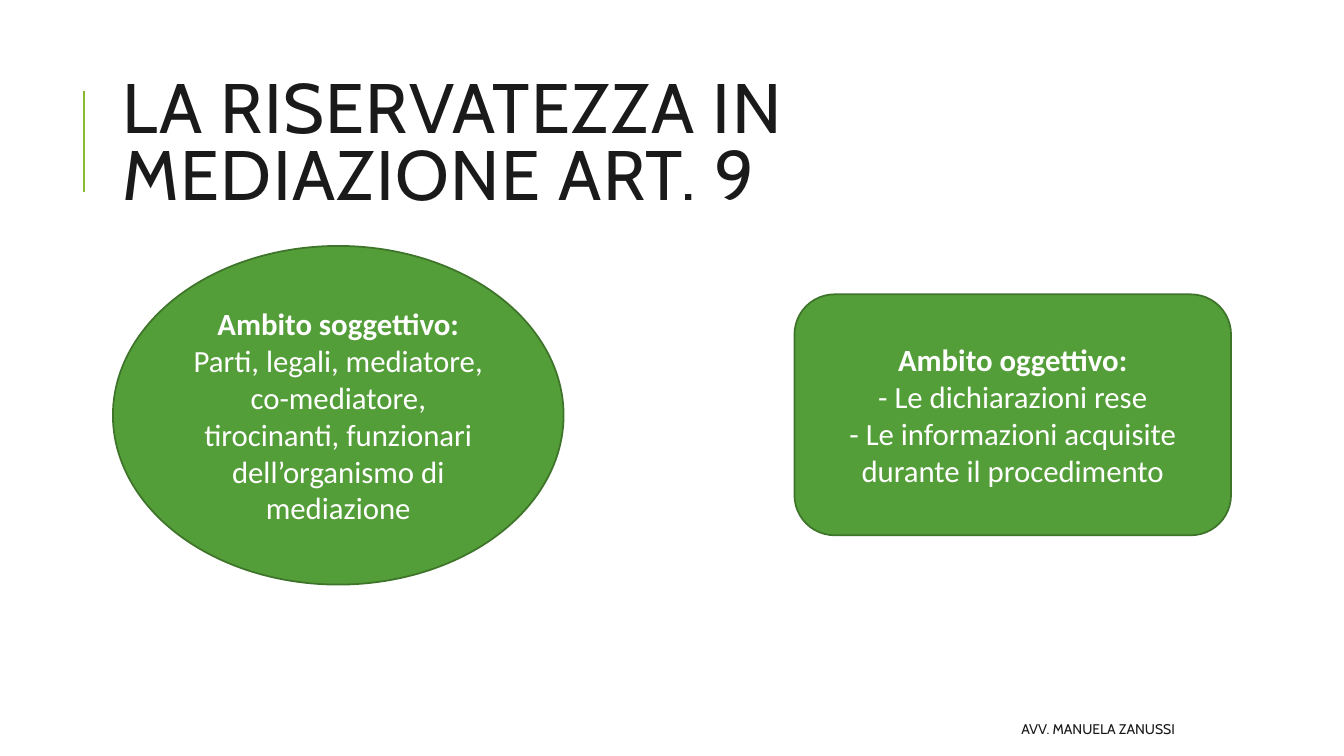
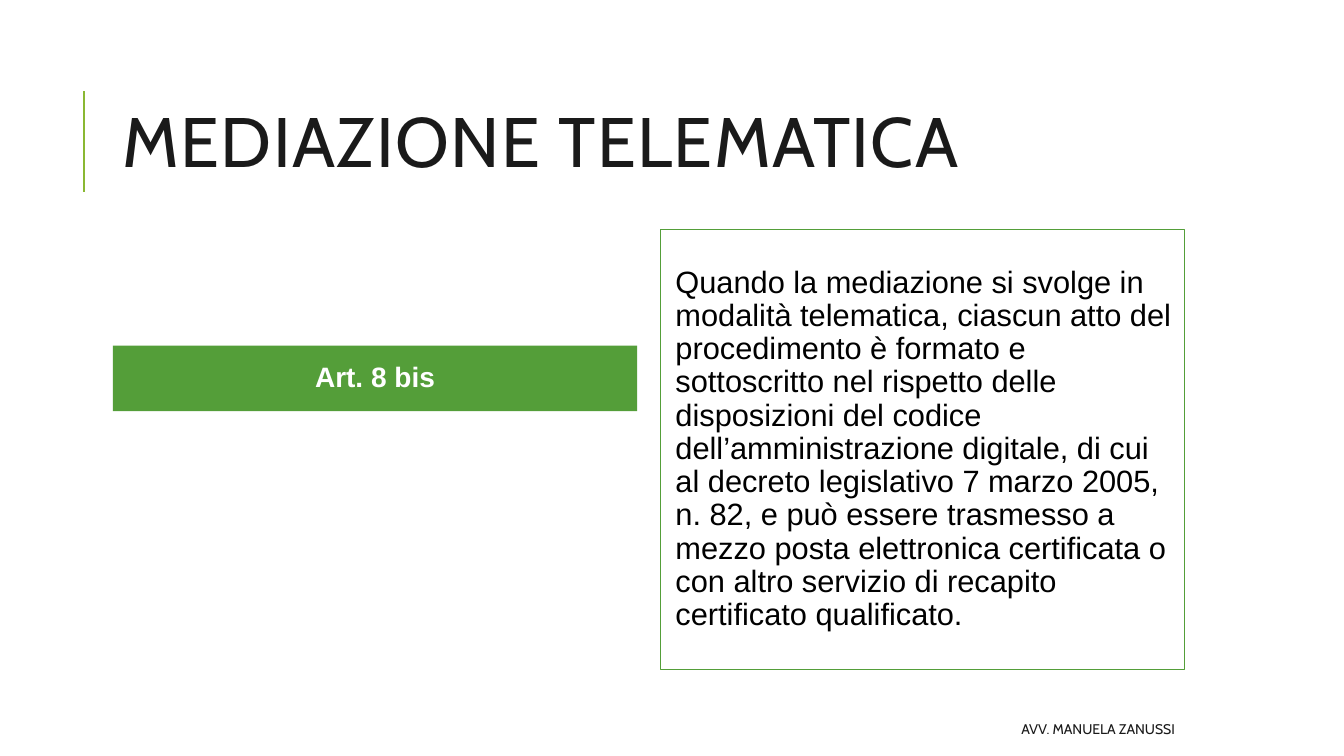
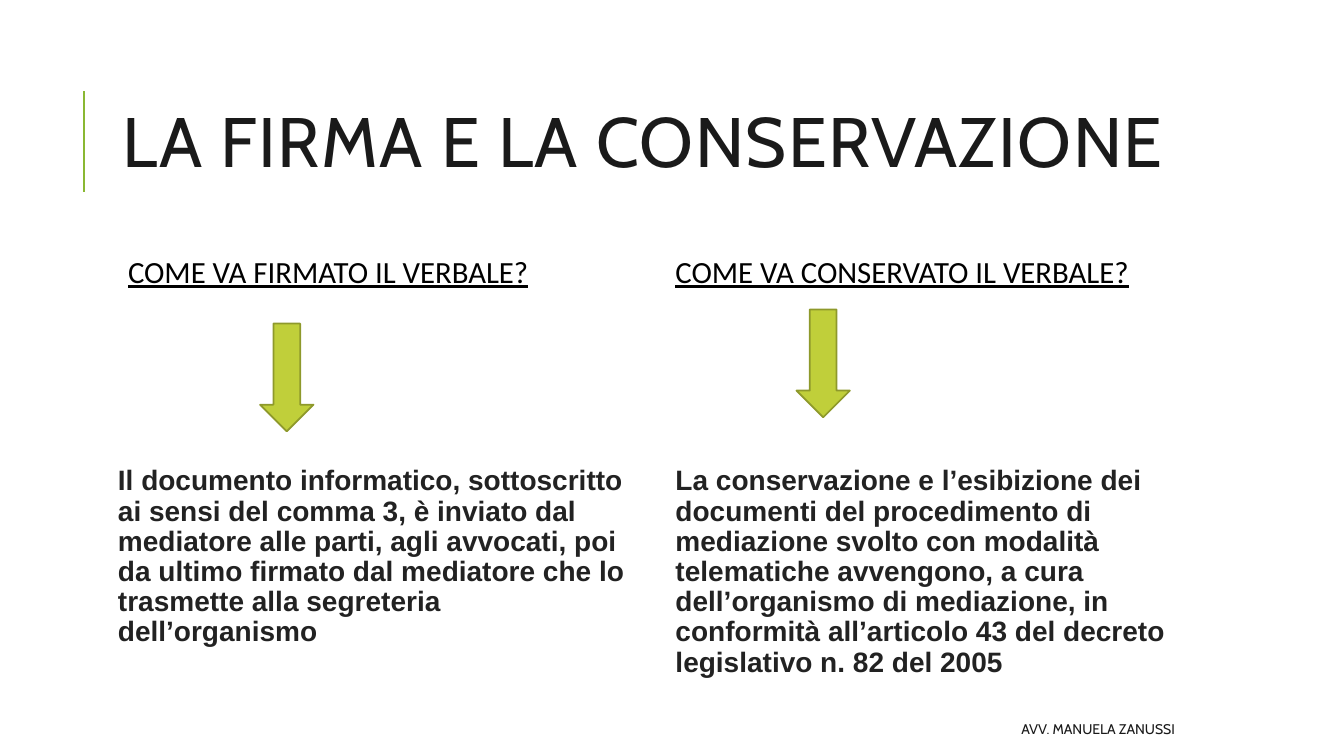
import dataclasses
import typing

import pptx
import pptx.dml.color
import pptx.enum.shapes
import pptx.enum.text
import pptx.oxml
import pptx.oxml.ns
import pptx.util

PX = 9144  # EMU; 100 px to the inch
COLORS = {
    "white": "FFFFFF", "black": "000000", "title": "1A1A1A", "body": "222222",
    "green": "549E39", "dark_green": "3E752A", "accent": "8AB833",
    "lime": "C0CF3A", "dark_lime": "8E992B",
}
SHAPES = pptx.enum.shapes.MSO_SHAPE
ALIGN = pptx.enum.text.PP_ALIGN
ANCHOR = pptx.enum.text.MSO_ANCHOR

LEFT, COLUMN_W, COLUMN_GAP = 112, 520, 23
RIGHT = LEFT + COLUMN_W + COLUMN_GAP
CONTENT_W = RIGHT + COLUMN_W - LEFT
INSET, INDENT = 5, 10
FOOTER = "AVV. MANUELA ZANUSSI"
BODY_SPACING = {"line": 0.9, "before": 12, "after": 2}


@dataclasses.dataclass(frozen=True)
class Box:
    x: int
    y: int
    w: int
    h: int

    def emu(self) -> list[int]:
        return [v * PX for v in dataclasses.astuple(self)]


@dataclasses.dataclass(frozen=True)
class Scope:
    """A green shape with a bold heading and plain lines."""
    kind: typing.Any
    box: Box
    heading: str
    lines: tuple[str, ...]


@dataclasses.dataclass(frozen=True)
class Answer:
    """A column with a question, an arrow and the reply."""
    x: int
    arrow: Box
    question: str
    reply: str
    indent: int


SCOPES = (
    Scope(SHAPES.OVAL, Box(112, 244, 447, 336), "Ambito soggettivo:",
          ("Parti, legali, mediatore, co-mediatore, tirocinanti, funzionari "
           "dell’organismo di mediazione",)),
    Scope(SHAPES.ROUNDED_RECTANGLE, Box(788, 292, 433, 239), "Ambito oggettivo:",
          ("- Le dichiarazioni rese",
           "- Le informazioni acquisite durante il procedimento")),
)
ARTICLE_TEXT = (
    "Quando la mediazione si svolge in modalità telematica, ciascun atto del "
    "procedimento è formato e sottoscritto nel rispetto delle disposizioni del "
    "codice dell’amministrazione digitale, di cui al decreto legislativo 7 marzo "
    "2005, n. 82, e può essere trasmesso a mezzo posta elettronica certificata o "
    "con altro servizio di recapito certificato qualificato."
)
ANSWERS = (
    Answer(LEFT, Box(258, 321, 53, 107), "COME VA FIRMATO IL VERBALE?",
           "Il documento informatico, sottoscritto ai sensi del comma 3, è inviato "
           "dal mediatore alle parti, agli avvocati, poi da ultimo firmato dal "
           "mediatore che lo trasmette alla segreteria dell’organismo", 0),
    Answer(RIGHT, Box(790, 307, 53, 107), "COME VA CONSERVATO IL VERBALE?",
           "La conservazione e l’esibizione dei documenti del procedimento di "
           "mediazione svolto con modalità telematiche avvengono, a cura "
           "dell’organismo di mediazione, in conformità all’articolo 43 del decreto "
           "legislativo n. 82 del 2005", INDENT),
)


def rgb(name: str) -> pptx.dml.color.RGBColor:
    return pptx.dml.color.RGBColor.from_string(COLORS[name])


def add_text(tf, text: str, *, size: int, font: str = "Calibri",
             color: str = "black", bold: bool = False, underline: bool = False,
             align=ALIGN.LEFT, line: float = 1.0, before: int = 0,
             after: int = 0, indent: int = 0, tracking: int = 0) -> None:
    """Fill the empty first paragraph, or append one; tracking is in points."""
    p = tf.paragraphs[0] if not tf.text else tf.add_paragraph()
    p.alignment = align
    p.line_spacing = line
    p.space_before = pptx.util.Pt(before)
    p.space_after = pptx.util.Pt(after)
    if indent:
        p._p.get_or_add_pPr().set("marL", str(indent * PX))
    r = p.add_run()
    r.text = text
    r.font.size = pptx.util.Pt(size)
    r.font.name = font
    r.font.bold = bold
    r.font.underline = underline
    r.font.color.rgb = rgb(color)
    if tracking:
        r._r.get_or_add_rPr().set("spc", str(tracking * 100))


def set_frame(tf, anchor, inset: int | None = None) -> None:
    tf.word_wrap = True
    tf.vertical_anchor = anchor
    if inset is not None:
        tf.margin_left = tf.margin_right = inset * PX
        tf.margin_top = tf.margin_bottom = inset * PX


def add_text_box(s, box: Box, anchor=ANCHOR.MIDDLE, inset: int | None = None):
    tf = s.shapes.add_textbox(*box.emu()).text_frame
    set_frame(tf, anchor, inset)
    return tf


def add_shape(s, kind, box: Box, *, fill: str | None = None,
              line: str | None = None, width: float = 1.25,
              inset: int | None = None):
    sp = s.shapes.add_shape(kind, *box.emu())
    sp.shadow.inherit = False
    if fill:
        sp.fill.solid()
        sp.fill.fore_color.rgb = rgb(fill)
    else:
        sp.fill.background()
    if line:
        sp.line.color.rgb = rgb(line)
        sp.line.width = pptx.util.Pt(width)
    else:
        sp.line.fill.background()
    set_frame(sp.text_frame, ANCHOR.MIDDLE, inset)
    return sp


def add_slide(prs, title: str):
    """Add a slide with the shared accent line, title and footer."""
    s = prs.slides.add_slide(prs.slide_layouts[6])
    accent = s.shapes.add_connector(
        pptx.enum.shapes.MSO_CONNECTOR.STRAIGHT, 83 * PX, 190 * PX, 83 * PX, 90 * PX)
    accent.line.color.rgb = rgb("accent")
    accent.line.width = pptx.util.Pt(1.5)
    accent._element.spPr.append(pptx.oxml.parse_xml(
        f"<a:effectLst {pptx.oxml.ns.nsdecls('a')}/>"))
    add_text(add_text_box(s, Box(LEFT, 64, CONTENT_W, 164)), title, size=50,
             font="Cabin", color="title", line=0.8, tracking=1)
    add_text(add_text_box(s, Box(530, 708, 645, 30)), FOOTER, size=10,
             font="Cabin", color="title", align=ALIGN.RIGHT)
    return s


def add_confidentiality_slide(prs) -> None:
    s = add_slide(prs, "LA RISERVATEZZA IN MEDIAZIONE ART. 9")
    for scope in SCOPES:
        sp = add_shape(s, scope.kind, scope.box, fill="green", line="dark_green")
        for i, text in enumerate((scope.heading, *scope.lines)):
            add_text(sp.text_frame, text, size=22, color="white", bold=i == 0,
                     align=ALIGN.CENTER)


def add_online_slide(prs) -> None:
    s = add_slide(prs, "MEDIAZIONE TELEMATICA")
    label = add_shape(s, SHAPES.RECTANGLE, Box(LEFT, 343, COLUMN_W, 65),
                      fill="green", inset=INSET)
    add_text(label.text_frame, "Art. 8 bis", size=20, font="Arial", color="white",
             bold=True, align=ALIGN.CENTER, **BODY_SPACING)
    article = add_shape(s, SHAPES.RECTANGLE, Box(RIGHT, 228, COLUMN_W, 436),
                        line="green", width=0.75, inset=INSET)
    add_text(article.text_frame, ARTICLE_TEXT, size=22, font="Arial",
             indent=INDENT, **BODY_SPACING)


def add_signature_slide(prs) -> None:
    s = add_slide(prs, "LA FIRMA E LA CONSERVAZIONE")
    for answer in ANSWERS:
        tf = add_text_box(s, Box(answer.x, 250, COLUMN_W, 440), ANCHOR.TOP, INSET)
        add_text(tf, answer.question, size=22, underline=True, indent=INDENT,
                 **BODY_SPACING)
        add_text(tf, answer.reply, size=20, font="Arial", color="body", bold=True,
                 indent=answer.indent, **{**BODY_SPACING, "before": 124})
        add_shape(s, SHAPES.DOWN_ARROW, answer.arrow, fill="lime", line="dark_lime")


def main() -> None:
    prs = pptx.Presentation()
    prs.slide_width, prs.slide_height = 1333 * PX, 750 * PX
    add_confidentiality_slide(prs)
    add_online_slide(prs)
    add_signature_slide(prs)
    prs.save("out.pptx")


if __name__ == "__main__":
    main()
